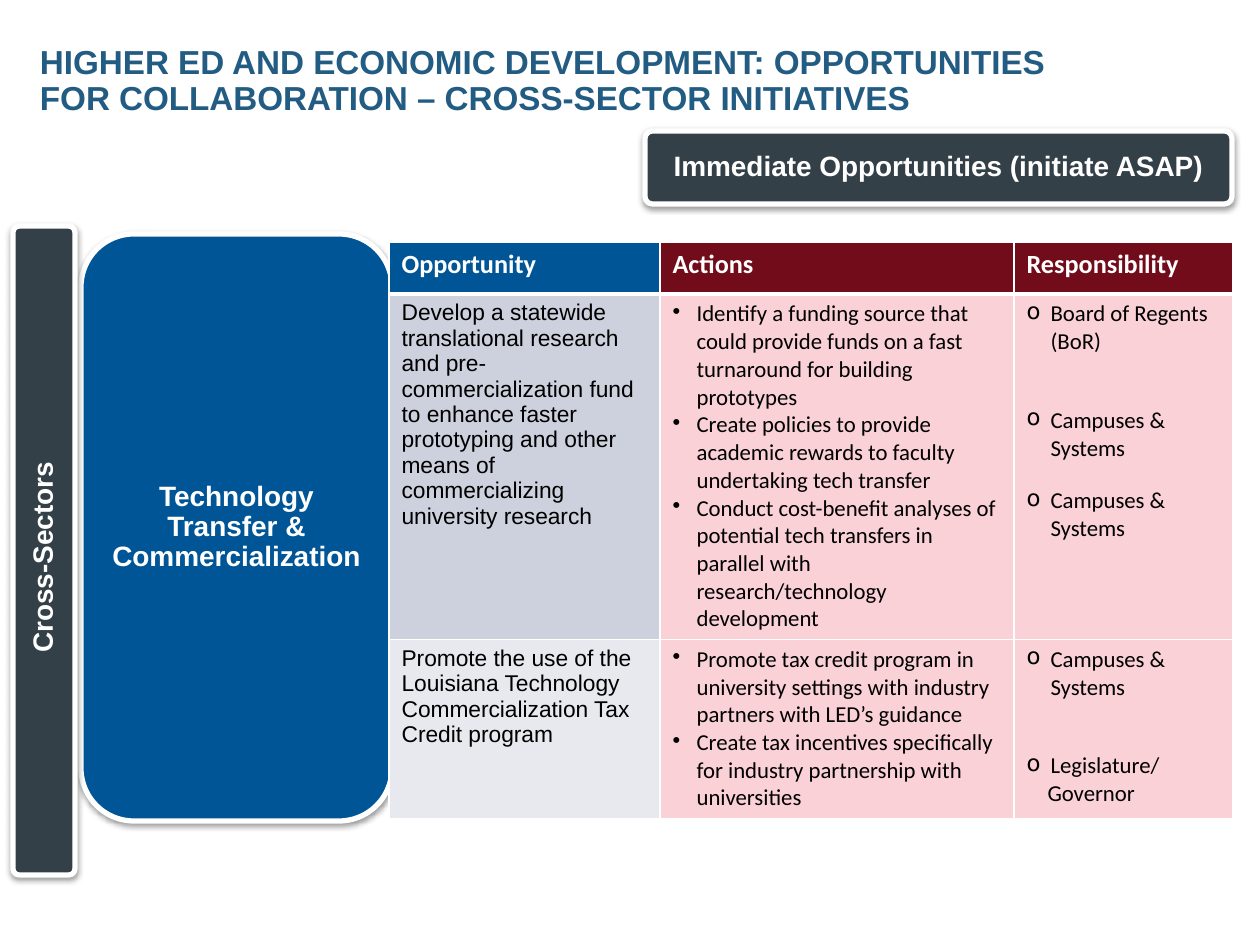
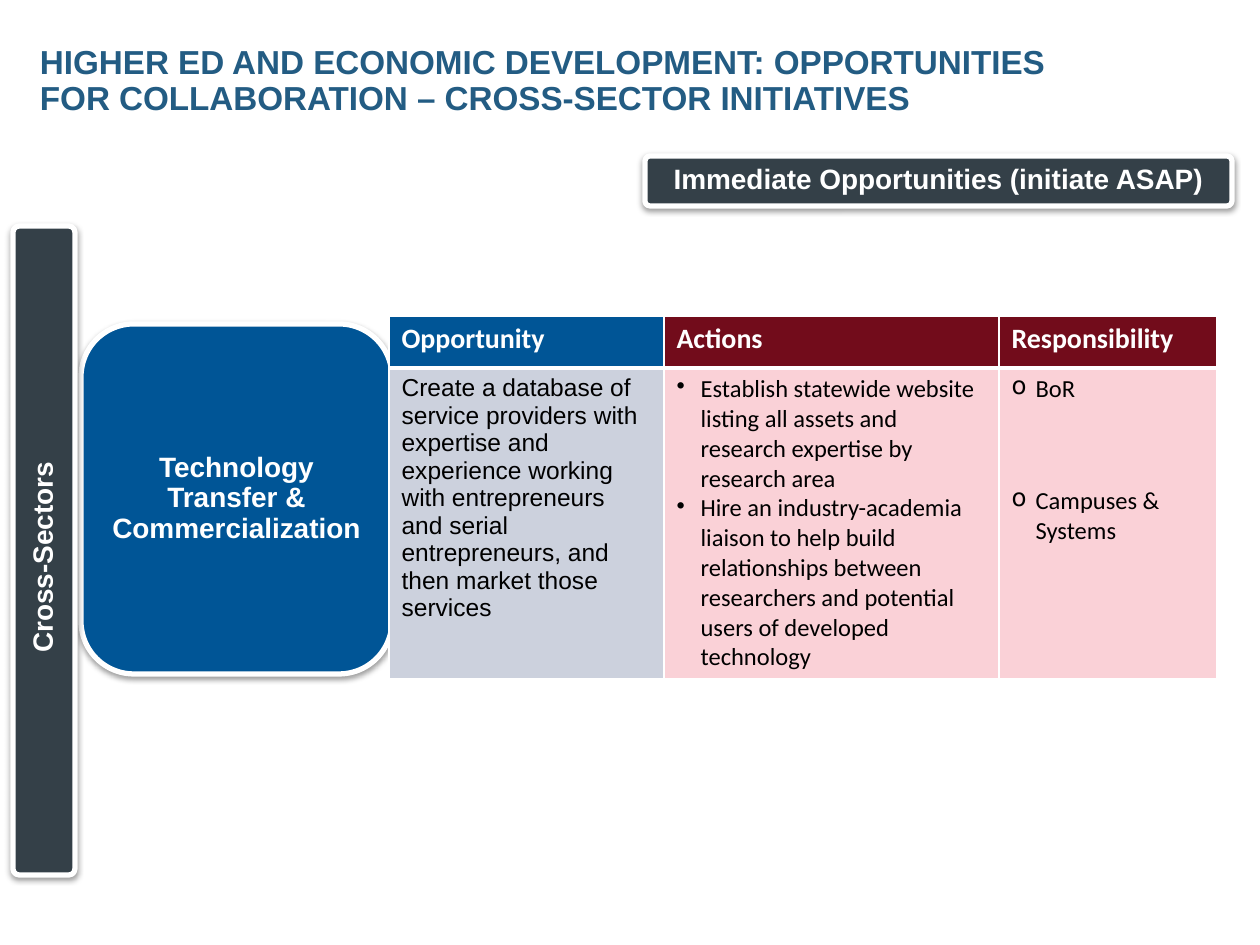
from dataclasses import dataclass

import lxml.etree
import pptx
import pptx.dml.color
import pptx.enum.shapes
import pptx.enum.text
import pptx.oxml
import pptx.oxml.ns
import pptx.util

RGB = pptx.dml.color.RGBColor
WHITE = RGB(0xFF, 0xFF, 0xFF)
BLACK = RGB(0, 0, 0)
TITLE_BLUE = RGB(0x23, 0x5C, 0x83)
SLATE = RGB(0x34, 0x40, 0x48)
BLUE = RGB(0x00, 0x55, 0x96)
MAROON = RGB(0x72, 0x0C, 0x1B)
PINK = RGB(0xFA, 0xD1, 0xD7)
OPPORTUNITY_TINTS = (RGB(0xCC, 0xD1, 0xDD), RGB(0xE7, 0xE9, 0xEF))

HEADING_FONT = "Arial"
BODY_FONT = "Calibri"
PX_PER_INCH = 126
BULLET_INDENT = 24
TITLE = (
    "HIGHER ED AND ECONOMIC DEVELOPMENT: OPPORTUNITIES "
    "FOR COLLABORATION – CROSS-SECTOR INITIATIVES"
)
COLUMN_HEADINGS = ("Opportunity", "Actions", "Responsibility")


def px(length: int) -> pptx.util.Emu:
    return pptx.util.Emu(round(length * 914400 / PX_PER_INCH))


@dataclass(frozen=True)
class Frame:
    left: int
    top: int
    width: int
    height: int

    def emu(self) -> tuple[pptx.util.Emu, ...]:
        return px(self.left), px(self.top), px(self.width), px(self.height)


@dataclass(frozen=True)
class Badge:
    label: str
    frame: Frame
    fill: RGB
    roundness: float = 0.1
    upright: bool = False


@dataclass(frozen=True)
class Item:
    text: str
    bullet: str = ""
    margin: int = 0
    gap: int = 0


@dataclass(frozen=True)
class Initiative:
    opportunity: str
    actions: tuple[str, ...]
    responsibilities: tuple[Item, ...]


@dataclass(frozen=True)
class SlidePlan:
    banner: Frame
    topic: Frame
    table_top: int
    column_widths: tuple[int, ...]
    row_heights: tuple[int, ...]
    body_size: int
    initiatives: tuple[Initiative, ...]


def duty(text: str, gap: int = 0) -> Item:
    return Item(text, "o", BULLET_INDENT, gap)


def style(paragraph, size: int, color: RGB, font: str, bold: bool = False) -> None:
    paragraph.font.size = pptx.util.Pt(size)
    paragraph.font.color.rgb = color
    paragraph.font.name = font
    paragraph.font.bold = bold


def add_title(slide) -> None:
    title = slide.shapes.title
    title.left, title.top, title.width, title.height = Frame(40, 45, 1074, 73).emu()
    frame = title.text_frame
    frame.text = TITLE
    frame.word_wrap = True
    frame.auto_size = pptx.enum.text.MSO_AUTO_SIZE.NONE
    frame.vertical_anchor = pptx.enum.text.MSO_ANCHOR.MIDDLE
    frame.margin_left = frame.margin_right = frame.margin_top = frame.margin_bottom = 0
    paragraph = frame.paragraphs[0]
    paragraph.alignment = pptx.enum.text.PP_ALIGN.LEFT
    paragraph.line_spacing = 0.9
    style(paragraph, 19, TITLE_BLUE, HEADING_FONT, bold=True)


def add_soft_shadow(shape) -> None:
    shape.shadow.inherit = False
    effects = shape.element.spPr.find(pptx.oxml.ns.qn("a:effectLst"))
    effects.append(pptx.oxml.parse_xml(
        f'<a:outerShdw {pptx.oxml.ns.nsdecls("a")} blurRad="40000" dist="20000" '
        'dir="5400000" rotWithShape="0"><a:srgbClr val="000000">'
        '<a:alpha val="38000"/></a:srgbClr></a:outerShdw>'
    ))


def add_badge(slide, badge: Badge) -> None:
    shape = slide.shapes.add_shape(
        pptx.enum.shapes.MSO_SHAPE.ROUNDED_RECTANGLE, *badge.frame.emu()
    )
    shape.adjustments[0] = badge.roundness
    shape.fill.solid()
    shape.fill.fore_color.rgb = badge.fill
    shape.line.color.rgb = WHITE
    shape.line.width = pptx.util.Pt(3)
    add_soft_shadow(shape)
    frame = shape.text_frame
    frame.text = badge.label
    frame.word_wrap = True
    frame.vertical_anchor = pptx.enum.text.MSO_ANCHOR.MIDDLE
    frame.margin_left = frame.margin_right = px(9)
    frame.margin_top = frame.margin_bottom = px(4)
    if badge.upright:
        frame.margin_top = px(18)
        frame._txBody.bodyPr.set("vert", "vert270")
    paragraph = frame.paragraphs[0]
    paragraph.alignment = pptx.enum.text.PP_ALIGN.CENTER
    paragraph.line_spacing = 0.9
    style(paragraph, 16, WHITE, HEADING_FONT, bold=True)


def add_borders(cell, row: int) -> None:
    widths = {"L": 1, "R": 1, "T": 3 if row == 1 else 1, "B": 3 if row == 0 else 1}
    properties = cell._tc.get_or_add_tcPr()
    for side, points in widths.items():
        line = lxml.etree.SubElement(
            properties, pptx.oxml.ns.qn(f"a:ln{side}"), w=str(pptx.util.Pt(points))
        )
        solid = lxml.etree.SubElement(line, pptx.oxml.ns.qn("a:solidFill"))
        lxml.etree.SubElement(solid, pptx.oxml.ns.qn("a:srgbClr"), val=str(WHITE))


def fill_cell(cell, row: int, items: tuple[Item, ...], fill: RGB, size: int,
              color: RGB, font: str) -> None:
    add_borders(cell, row)
    cell.fill.solid()
    cell.fill.fore_color.rgb = fill
    for index, item in enumerate(items):
        frame = cell.text_frame
        paragraph = frame.add_paragraph() if index else frame.paragraphs[0]
        paragraph.text = item.text
        if item.gap:
            paragraph.space_before = px(item.gap)
        properties = paragraph._p.get_or_add_pPr()
        properties.set("marL", str(px(item.margin)))
        properties.set("indent", str(px(-item.margin if item.bullet else 0)))
        if item.bullet:
            lxml.etree.SubElement(
                properties, pptx.oxml.ns.qn("a:buChar"), char=item.bullet
            )
        style(paragraph, size, color, font, bold=row == 0)


def add_initiative_table(slide, plan: SlidePlan) -> None:
    frame = Frame(389, plan.table_top, sum(plan.column_widths), sum(plan.row_heights))
    table = slide.shapes.add_table(
        len(plan.row_heights), len(COLUMN_HEADINGS), *frame.emu()
    ).table
    table.horz_banding = False
    for column, width in zip(table.columns, plan.column_widths):
        column.width = px(width)
    for table_row, height in zip(table.rows, plan.row_heights):
        table_row.height = px(height)
    for column, heading in enumerate(COLUMN_HEADINGS):
        fill_cell(table.cell(0, column), 0, (Item(heading),), MAROON if column else BLUE,
                  plan.body_size + 2, WHITE, BODY_FONT)
    for row, initiative in enumerate(plan.initiatives, 1):
        actions = tuple(Item(text, "•", BULLET_INDENT) for text in initiative.actions)
        contents = (
            ((Item(initiative.opportunity),), OPPORTUNITY_TINTS[row - 1], HEADING_FONT),
            (actions, PINK, BODY_FONT),
            (initiative.responsibilities, PINK, BODY_FONT),
        )
        for column, (items, fill, font) in enumerate(contents):
            fill_cell(table.cell(row, column), row, items, fill, plan.body_size,
                      BLACK, font)


def add_initiative_slide(deck, plan: SlidePlan) -> None:
    slide = deck.slides.add_slide(deck.slide_layouts.get_by_name("Title Only"))
    add_title(slide)
    for badge in (
        Badge("Immediate Opportunities (initiate ASAP)", plan.banner, SLATE),
        Badge("Technology Transfer & Commercialization", plan.topic, BLUE, 0.17),
        Badge("Cross-Sectors", Frame(13, 226, 62, 649), SLATE, upright=True),
    ):
        add_badge(slide, badge)
    add_initiative_table(slide, plan)


PLANS = (
    SlidePlan(
        banner=Frame(645, 131, 587, 73),
        topic=Frame(81, 234, 311, 587),
        table_top=242,
        column_widths=(271, 354, 219),
        row_heights=(52, 344, 178),
        body_size=13,
        initiatives=(
            Initiative(
                "Develop a statewide translational research and pre-commercialization "
                "fund to enhance faster prototyping and other means of commercializing "
                "university research",
                (
                    "Identify a funding source that could provide funds on a fast "
                    "turnaround for building prototypes",
                    "Create policies to provide academic rewards to faculty "
                    "undertaking tech transfer",
                    "Conduct cost-benefit analyses of potential tech transfers in "
                    "parallel with research/technology development",
                ),
                (
                    duty("Board of Regents (BoR)"),
                    duty("Campuses & Systems", gap=51),
                    duty("Campuses & Systems", gap=25),
                ),
            ),
            Initiative(
                "Promote the use of the Louisiana Technology Commercialization Tax "
                "Credit program",
                (
                    "Promote tax credit program in university settings with industry "
                    "partners with LED’s guidance",
                    "Create tax incentives specifically for industry partnership with "
                    "universities",
                ),
                (
                    duty("Campuses & Systems"),
                    duty("Legislature/", gap=51),
                    Item("Governor", margin=21),
                ),
            ),
        ),
    ),
    SlidePlan(
        banner=Frame(645, 156, 587, 50),
        topic=Frame(81, 324, 311, 350),
        table_top=316,
        column_widths=(275, 335, 218),
        row_heights=(52, 310),
        body_size=14,
        initiatives=(
            Initiative(
                "Create a database of service providers with expertise and experience "
                "working with entrepreneurs and serial entrepreneurs, and then market "
                "those services",
                (
                    "Establish statewide website listing all assets and research "
                    "expertise by research area",
                    "Hire an industry-academia liaison to help build relationships "
                    "between researchers and potential users of developed technology",
                ),
                (duty("BoR"), duty("Campuses & Systems", gap=82)),
            ),
        ),
    ),
)


def main() -> None:
    deck = pptx.Presentation()
    deck.slide_width, deck.slide_height = px(1260), px(945)
    for plan in PLANS:
        add_initiative_slide(deck, plan)
    deck.save("out.pptx")


if __name__ == "__main__":
    main()
